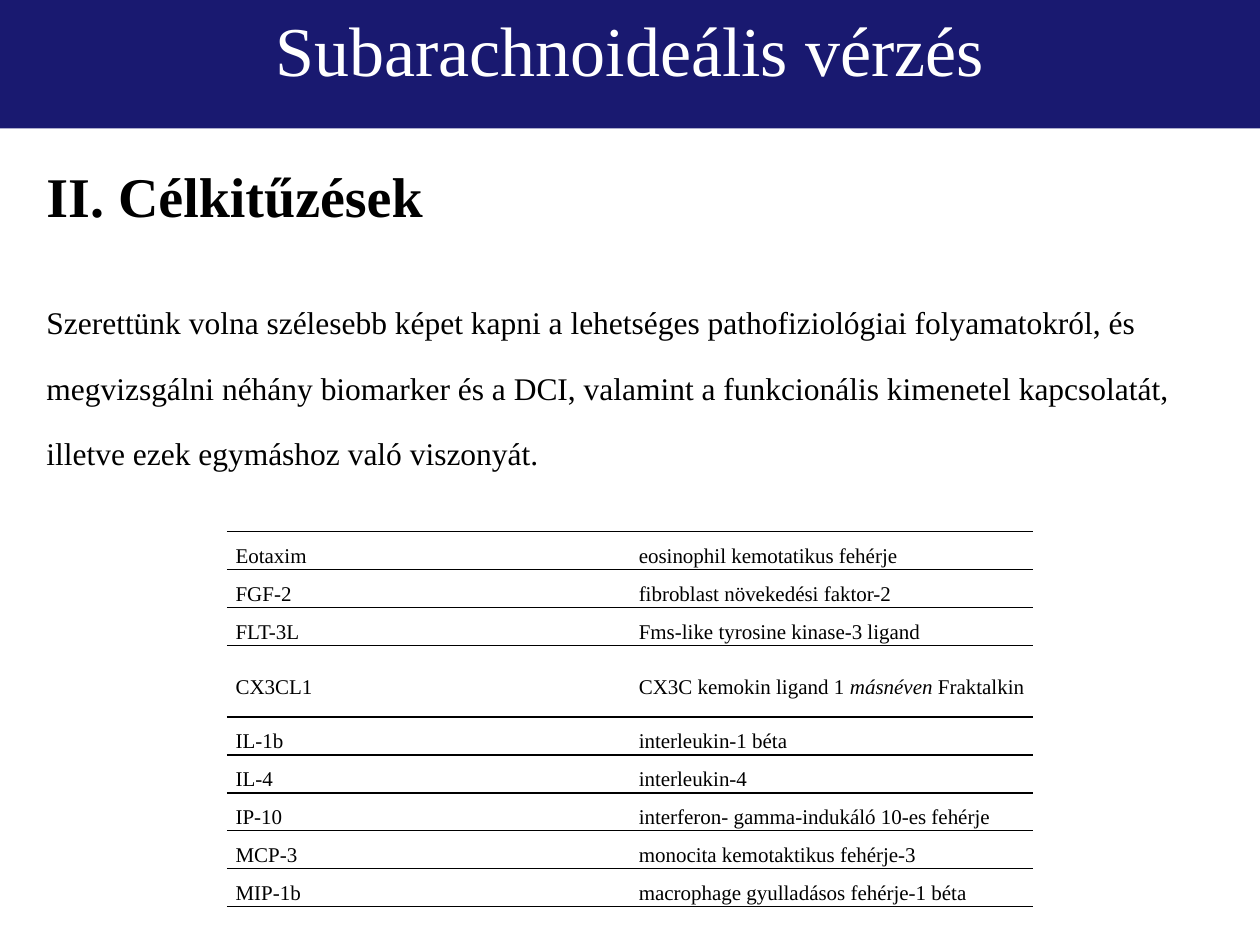
from lxml import etree
from pptx import Presentation
from pptx.dml.color import RGBColor
from pptx.enum.shapes import MSO_SHAPE
from pptx.enum.text import MSO_ANCHOR, PP_ALIGN
from pptx.oxml.ns import qn
from pptx.util import Inches, Pt

RECTANGLE = MSO_SHAPE.RECTANGLE
TOP, MIDDLE = MSO_ANCHOR.TOP, MSO_ANCHOR.MIDDLE
CENTER, LEFT, JUSTIFY = PP_ALIGN.CENTER, PP_ALIGN.LEFT, PP_ALIGN.JUSTIFY
FONT = "Times New Roman"
NAVY, WHITE, BLACK = "191970", "FFFFFF", "000000"
TITLE_ONLY = 5


def add_span(para, text, size, color=BLACK, **formats):
    span = para.add_run()
    span.text = text
    span.font.color.rgb = RGBColor.from_string(color)
    for name, value in {"name": FONT, "size": Pt(size), **formats}.items():
        setattr(span.font, name, value)


def rule_cell(cell):
    """Draw black lines above and below the cell and none at its sides."""
    properties = cell._tc.get_or_add_tcPr()
    for index, side in enumerate(("lnL", "lnR", "lnT", "lnB")):
        line = etree.Element(qn(f"a:{side}"), w=str(Pt(1)))
        if side in ("lnT", "lnB"):
            fill = etree.SubElement(line, qn("a:solidFill"))
            etree.SubElement(fill, qn("a:srgbClr"), val=BLACK)
        else:
            etree.SubElement(line, qn("a:noFill"))
        properties.insert(index, line)


deck = Presentation()
deck.slide_width, deck.slide_height = Inches(10), Inches(7.5)
page = deck.slides.add_slide(deck.slide_layouts[TITLE_ONLY])

# Title on a navy banner
title = page.shapes.title
banner = page.shapes.add_shape(RECTANGLE, 0, 0, Inches(10), Inches(1.02))
banner.shadow.inherit = False
banner.fill.solid()
banner.fill.fore_color.rgb = RGBColor.from_string(NAVY)
banner.line.fill.background()
title._element.addprevious(banner._element)  # banner goes behind the title

title.left, title.top, title.width, title.height = 0, 0, Inches(10), Inches(0.77)
title.text_frame.vertical_anchor = TOP
title_para = title.text_frame.paragraphs[0]
title_para.alignment = CENTER
add_span(title_para, "Subarachnoideális vérzés", 40, WHITE)

# Heading and aims
box = page.shapes.add_textbox(Inches(0.27), Inches(1.23), Inches(9.45), Inches(2.8))
box.text_frame.word_wrap = True
aims = [
    ("II. Célkitűzések", 32, True, LEFT, 1, 4),
    ("Szerettünk volna szélesebb képet kapni a lehetséges pathofiziológiai folyamatokról, és",
     18, False, JUSTIFY, 1.5, 32),
    ("megvizsgálni néhány biomarker és a DCI, valamint a funkcionális kimenetel kapcsolatát,",
     18, False, JUSTIFY, 1.5, 5),
    ("illetve ezek egymáshoz való viszonyát.", 18, False, JUSTIFY, 1.5, 5),
]
for index, (text, size, bold, alignment, spacing, before) in enumerate(aims):
    para = box.text_frame.paragraphs[0] if index == 0 else box.text_frame.add_paragraph()
    formats = {"alignment": alignment, "line_spacing": spacing, "space_before": Pt(before)}
    for name, value in formats.items():
        setattr(para, name, value)
    add_span(para, text, size, bold=bold)

# Biomarker table; each description is a list of spans, every second one italic
biomarkers = [
    ("Eotaxim", ["eosinophil kemotatikus fehérje"]),
    ("FGF-2", ["fibroblast növekedési faktor-2"]),
    ("FLT-3L", ["Fms-like tyrosine kinase-3 ligand"]),
    ("CX3CL1", ["CX3C kemokin ligand 1 ", "másnéven", " Fraktalkin"]),
    ("IL-1b", ["interleukin-1 béta"]),
    ("IL-4", ["interleukin-4"]),
    ("IP-10", ["interferon- gamma-indukáló 10-es fehérje"]),
    ("MCP-3", ["monocita kemotaktikus fehérje-3"]),
    ("MIP-1b", ["macrophage gyulladásos fehérje-1 béta"]),
]
table = page.shapes.add_table(len(biomarkers), 2, Inches(1.8), Inches(4.22),
                              Inches(6.4), Inches(2.84)).table
table.first_row = table.horz_banding = False
cell_formats = {
    "vertical_anchor": MIDDLE,
    "margin_left": Inches(0.07), "margin_right": Inches(0.07),
    "margin_top": 0, "margin_bottom": 0,
}
for row, (marker, description) in enumerate(biomarkers):
    table.rows[row].height = Inches(0.57 if len(description) > 1 else 0.28)
    for column, spans in enumerate(([marker], description)):
        cell = table.cell(row, column)
        for name, value in cell_formats.items():
            setattr(cell, name, value)
        cell.fill.background()
        rule_cell(cell)
        para = cell.text_frame.paragraphs[0]
        para.line_spacing = 1.5
        for position, text in enumerate(spans):
            add_span(para, text, 12, italic=position % 2 == 1)

deck.save("out.pptx")
